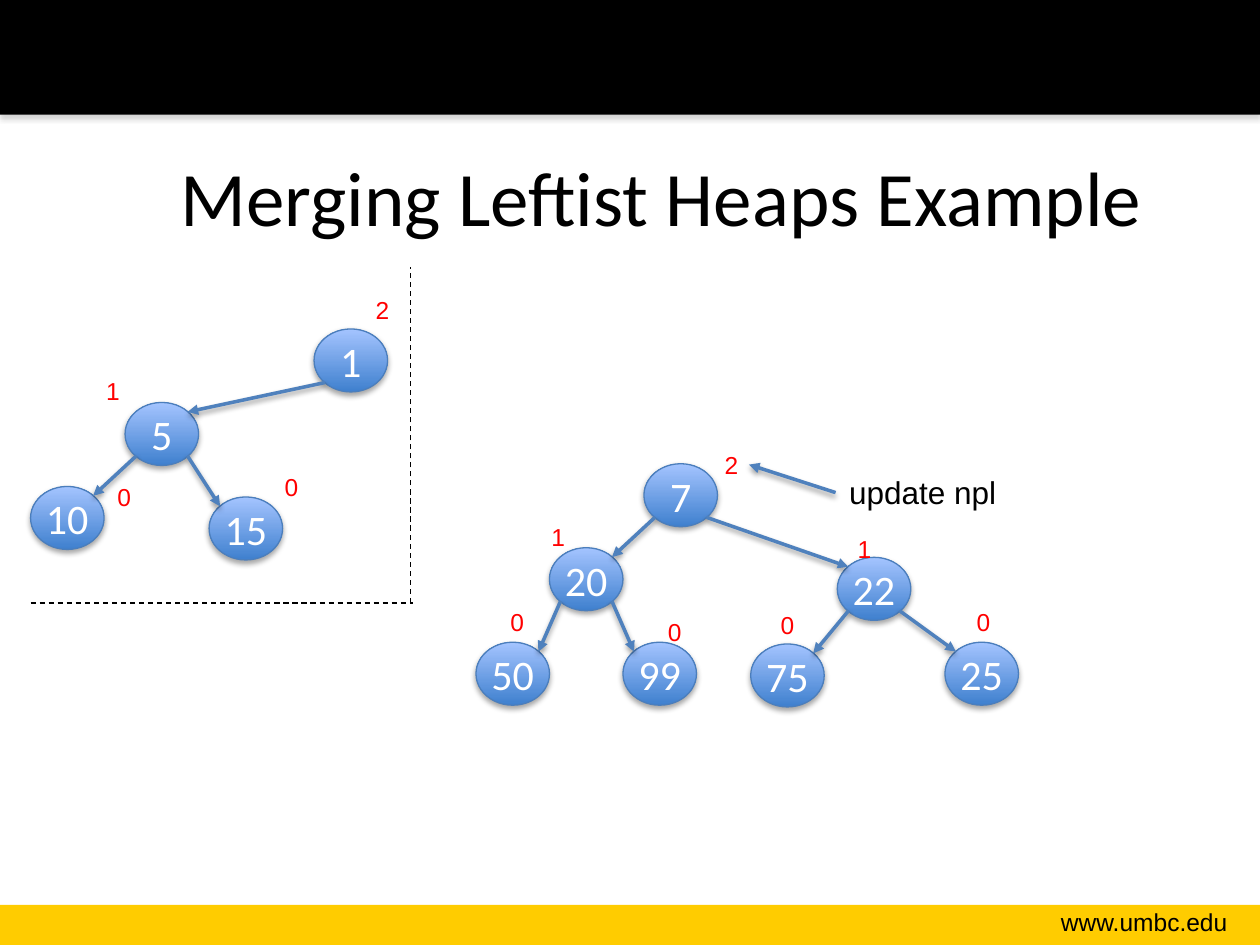
from lxml import etree
from pptx import Presentation
from pptx.dml.color import RGBColor
from pptx.enum.dml import MSO_LINE
from pptx.enum.shapes import MSO_CONNECTOR, MSO_SHAPE
from pptx.enum.text import MSO_ANCHOR, PP_ALIGN
from pptx.oxml import parse_xml
from pptx.oxml.ns import qn
from pptx.util import Pt

BLACK = RGBColor(0, 0, 0)
WHITE = RGBColor(255, 255, 255)
GOLD = RGBColor(0xFF, 0xCC, 0x00)
RED = RGBColor(255, 0, 0)
NODE_DARK = RGBColor(0x3F, 0x80, 0xCE)
NODE_LIGHT = RGBColor(0xA4, 0xC4, 0xFF)
NODE_LINE = RGBColor(0x4B, 0x7E, 0xBC)
EDGE = RGBColor(0x4F, 0x81, 0xBD)

TITLE = "Merging Leftist Heaps Example"
# key: (parent, node left and top, npl, npl left and top)
NODES = {
    1: (None, (179.5, 188), 2, (207.5, 165)),
    5: (1, (71.5, 230), 1, (53.5, 211.5)),
    10: (5, (17.5, 278), 0, (60, 272)),
    15: (5, (119.5, 284), 0, (155.5, 266)),
    7: (None, (368, 265), 2, (407, 253.5)),
    20: (7, (314, 313), 1, (308, 295)),
    22: (7, (478.5, 318.5), 1, (483, 301.5)),
    50: (20, (272, 367), 0, (284.5, 343.5)),
    99: (20, (356, 367), 0, (374.5, 349)),
    75: (22, (429, 368), 0, (439, 345)),
    25: (22, (540, 367), 0, (551, 343.5)),
}
NODE_W, NODE_H = 42, 36
INSET = 0.15  # where an ellipse meets its diagonal, as a share of its size
DIVIDERS = [((17.5, 344.5), (236, 344.5)), ((234.5, 344.5), (234.5, 152.5))]
SHADOW = (
    '<a:effectLst xmlns:a="http://schemas.openxmlformats.org/drawingml/2006/main">'
    '<a:outerShdw blurRad="40000" dist="23000" dir="5400000" rotWithShape="0">'
    '<a:srgbClr val="{}"><a:alpha val="{}000"/></a:srgbClr>'
    '</a:outerShdw></a:effectLst>'
)


def add_shadow(sp, color="000000", alpha=35):
    props = sp._element.spPr
    for old in props.findall(qn("a:effectLst")):
        props.remove(old)
    props.append(parse_xml(SHADOW.format(color, alpha)))


def write(sp, text, size, font, color, align):
    p = sp.text_frame.paragraphs[0]
    p.text = text
    p.alignment = align
    f = p.runs[0].font
    f.size, f.name, f.color.rgb = Pt(size), font, color


def add_text(s, text, box, size, color, align=PP_ALIGN.LEFT, wrap=True):
    sp = s.shapes.add_textbox(*map(Pt, box))
    sp.text_frame.word_wrap = wrap
    write(sp, text, size, "Arial", color, align)


def add_bar(s, top, height, color):
    sp = s.shapes.add_shape(MSO_SHAPE.RECTANGLE, 0, Pt(top), Pt(720), Pt(height))
    sp.fill.solid()
    sp.fill.fore_color.rgb = color
    sp.line.fill.background()
    sp.shadow.inherit = False
    return sp


def add_line(s, start, end, color, width):
    line = s.shapes.add_connector(MSO_CONNECTOR.STRAIGHT, *map(Pt, (*start, *end)))
    line.line.color.rgb = color
    line.line.width = Pt(width)
    return line


def add_arrow(s, start, end):
    line = add_line(s, start, end, EDGE, 2)
    etree.SubElement(line.line._get_or_add_ln(), qn("a:tailEnd"), type="triangle")
    add_shadow(line, alpha=38)


def add_divider(s, start, end):
    line = add_line(s, start, end, BLACK, 0.75)
    line.line.dash_style = MSO_LINE.DASH
    etree.SubElement(line._element.spPr, qn("a:effectLst"))


def add_node(s, key, left, top):
    sp = s.shapes.add_shape(MSO_SHAPE.OVAL, *map(Pt, (left, top, NODE_W, NODE_H)))
    sp.fill.gradient()
    sp.fill.gradient_angle = 90
    for stop, color in zip(sp.fill.gradient_stops, (NODE_DARK, NODE_LIGHT)):
        stop.color.rgb = color
    sp.line.color.rgb = NODE_LINE
    sp.line.width = Pt(0.75)
    add_shadow(sp)
    sp.text_frame.word_wrap = False
    sp.text_frame.vertical_anchor = MSO_ANCHOR.MIDDLE
    write(sp, str(key), 24, "Calibri", WHITE, PP_ALIGN.CENTER)


def add_edge(s, parent, child):
    """Join a lower corner of the parent to the facing upper corner of the child."""
    (px, py), (cx, cy) = parent, child
    near, far = NODE_W * INSET, NODE_W * (1 - INSET)
    start_x, end_x = (near, far) if cx < px else (far, near)
    add_arrow(s, (px + start_x, py + NODE_H * (1 - INSET)),
              (cx + end_x, cy + NODE_H * INSET))


def main():
    prs = Presentation()
    prs.slide_width, prs.slide_height = Pt(720), Pt(540)
    s = prs.slides.add_slide(prs.slide_layouts[5])

    title = s.shapes.title
    title.left, title.top, title.width, title.height = map(Pt, (54, 67, 648, 90))
    title.text_frame.vertical_anchor = MSO_ANCHOR.MIDDLE
    write(title, TITLE, 44, "Calibri", BLACK, PP_ALIGN.CENTER)

    add_bar(s, 517, 23, GOLD)
    add_shadow(add_bar(s, 0, 65.5, BLACK), "808080")
    add_text(s, "www.umbc.edu", (565.5, 515, 143, 24.5), 14, BLACK, PP_ALIGN.RIGHT)

    for key, (parent, place, _, _) in NODES.items():
        add_node(s, key, *place)
        if parent:
            add_edge(s, NODES[parent][1], place)
    for _, _, npl, place in NODES.values():
        add_text(s, str(npl), (*place, 21, 24.5), 14, RED)

    for start, end in DIVIDERS:
        add_divider(s, start, end)
    add_text(s, "update npl", (477.5, 267, 99.5, 29), 18, BLACK,
             PP_ALIGN.CENTER, wrap=False)
    add_arrow(s, (477.5, 281.5), (428, 265.5))

    prs.save("out.pptx")


if __name__ == "__main__":
    main()
